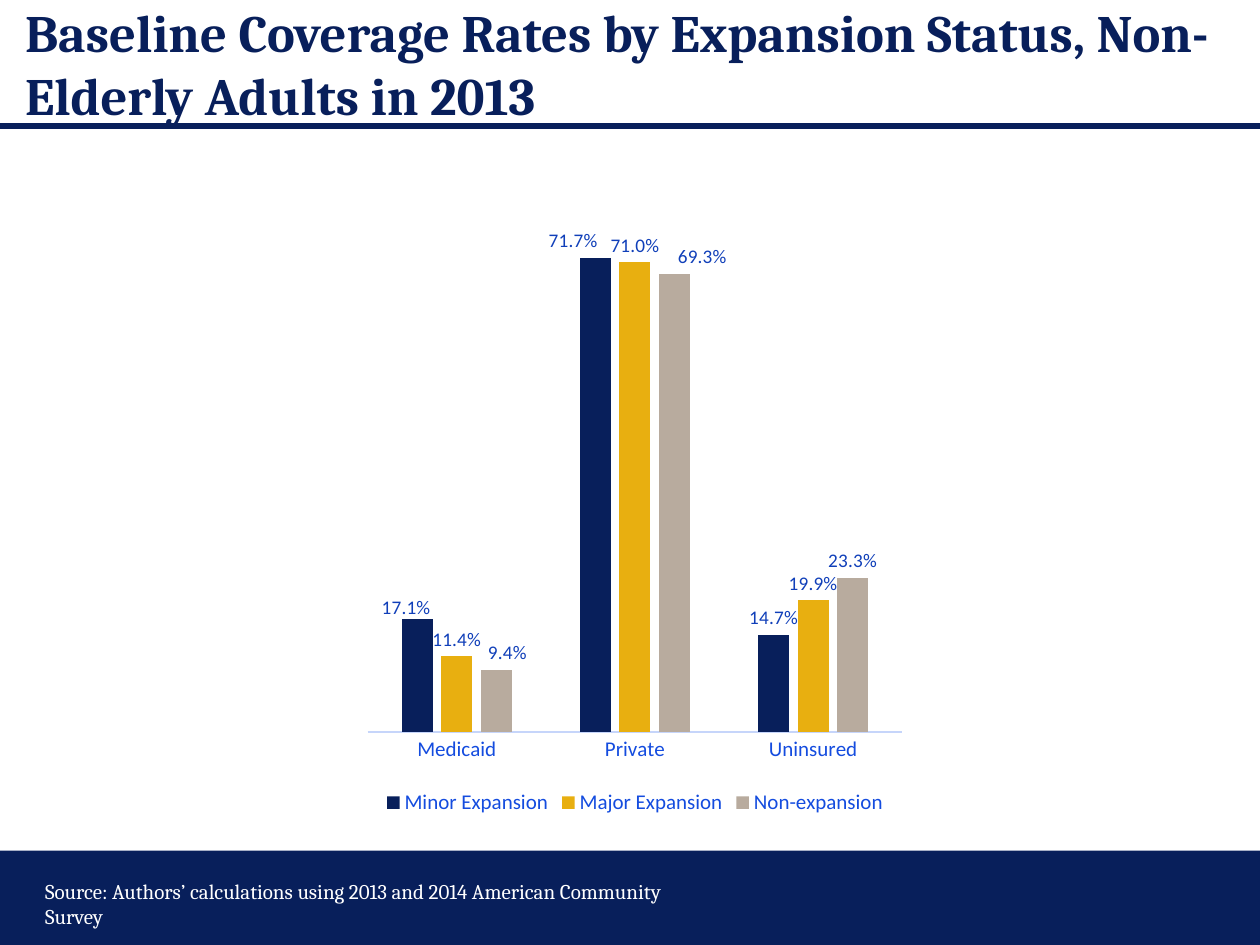
from lxml import etree
from pptx import Presentation
from pptx.chart.data import CategoryChartData
from pptx.dml.color import RGBColor
from pptx.enum.chart import (XL_CHART_TYPE, XL_LABEL_POSITION, XL_LEGEND_POSITION,
                             XL_TICK_MARK)
from pptx.enum.shapes import MSO_CONNECTOR, MSO_SHAPE
from pptx.enum.text import MSO_ANCHOR
from pptx.oxml.ns import qn
from pptx.util import Inches, Pt

COLUMN = XL_CHART_TYPE.COLUMN_CLUSTERED
OUTSIDE = XL_LABEL_POSITION.OUTSIDE_END
BOTTOM = XL_LEGEND_POSITION.BOTTOM
NONE = XL_TICK_MARK.NONE
STRAIGHT = MSO_CONNECTOR.STRAIGHT
RECT = MSO_SHAPE.RECTANGLE
TOP, MIDDLE = MSO_ANCHOR.TOP, MSO_ANCHOR.MIDDLE

COLORS = {"navy": "081F5B", "gold": "E8AF10", "taupe": "B8AB9E", "blue": "144CDF",
          "label": "103FB9", "axis": "C6D5FA", "white": "FFFFFF"}
FORMATS = {
    "title": {"name": "Cambria", "size": Pt(30), "bold": True, "color": "navy"},
    "source": {"name": "Cambria", "size": Pt(12), "color": "white"},
    "chart": {"name": "Calibri", "size": Pt(10), "color": "navy"},
    "axis": {"name": "Calibri", "size": Pt(12), "color": "blue"},
    "label": {"name": "Calibri", "size": Pt(11), "color": "label"},
}
PERCENT = "0.0%"
CATS = ["Medicaid", "Private", "Uninsured"]
# Name, colour, values, and label shifts by point as shares of the chart
SERIES = [
    ("Minor Expansion", "navy", (0.171, 0.717, 0.147), {0: (-0.02, 0.01), 1: (-0.04, 0)}),
    ("Major Expansion", "gold", (0.114, 0.71, 0.199), {}),
    ("Non-expansion", "taupe", (0.094, 0.693, 0.233), {0: (0.02, 0), 1: (0.05, 0)}),
]


def rgb(key):
    return RGBColor.from_string(COLORS[key])


def style(font, kind):
    for key, value in FORMATS[kind].items():
        if key == "color":
            font.color.rgb = rgb(value)
        else:
            setattr(font, key, value)


def add_text(slide, box, text, kind, anchor):
    frame = slide.shapes.add_textbox(*map(Inches, box)).text_frame
    frame.word_wrap = True
    frame.vertical_anchor = anchor
    run = frame.paragraphs[0].add_run()
    run.text = text
    style(run.font, kind)


def make_layout(**parts):
    layout = etree.Element(qn("c:layout"))
    manual = etree.SubElement(layout, qn("c:manualLayout"))
    for tag, value in parts.items():
        etree.SubElement(manual, qn("c:" + tag)).set("val", str(value))
    return layout


def add_header(slide, box):
    left, top, width, height = box
    # Rule along the lower edge
    rule = slide.shapes.add_connector(STRAIGHT, Inches(left), Inches(top + height),
                                      Inches(left + width), Inches(top + height))
    rule.line.color.rgb = rgb("navy")
    rule.line.width = Pt(3)
    etree.SubElement(rule._element.spPr, qn("a:effectLst"))
    add_text(slide, (left + 0.1, top, width - 0.25, height),
             "Baseline Coverage Rates by Expansion Status, Non-Elderly Adults in 2013",
             "title", MIDDLE)


def add_labels(series, shifts):
    labels = series.data_labels
    labels.show_value = True
    labels.number_format = PERCENT
    labels.number_format_is_linked = False
    labels.position = OUTSIDE
    style(labels.font, "label")
    # Points whose label is moved aside
    for index, (x, y) in shifts.items():
        label = series.points[index].data_label
        label.position = OUTSIDE
        style(label.font, "label")
        idx = series._element.xpath(f"c:dLbls/c:dLbl/c:idx[@val='{index}']")[0]
        code = etree.Element(qn("c:numFmt"), formatCode=PERCENT, sourceLinked="0")
        idx.addnext(code)
        idx.addnext(make_layout(x=x, y=y))


def add_rates(slide, box):
    data = CategoryChartData(number_format=PERCENT)
    data.categories = CATS
    for name, _, values, _ in SERIES:
        data.add_series(name, values)
    chart = slide.shapes.add_chart(COLUMN, *map(Inches, box), data).chart
    chart.has_title = False
    style(chart.font, "chart")

    # Plot and bars
    plot = chart.plots[0]
    plot.vary_by_categories = False
    plot.gap_width, plot.overlap = 219, -27
    for series, (_, color, _, shifts) in zip(plot.series, SERIES):
        series.format.fill.solid()
        series.format.fill.fore_color.rgb = rgb(color)
        add_labels(series, shifts)
    area = chart._chartSpace.chart.plotArea
    for old in area.findall(qn("c:layout")):
        area.remove(old)
    area.insert(0, make_layout(layoutTarget="inner", xMode="edge", yMode="edge",
                               x=0.02, y=0.02, w=0.96, h=0.84))

    # Axes
    rates = chart.value_axis
    rates.minimum_scale, rates.maximum_scale = 0, 0.8
    rates.has_major_gridlines = False
    rates.visible = False
    groups = chart.category_axis
    groups.major_tick_mark = groups.minor_tick_mark = NONE
    groups.format.line.color.rgb = rgb("axis")
    groups.format.line.width = Pt(0.75)
    style(groups.tick_labels.font, "axis")

    # Legend
    chart.has_legend = True
    chart.legend.position = BOTTOM
    chart.legend.include_in_layout = False
    style(chart.legend.font, "axis")


def add_footer(slide, box):
    left, top, _, _ = box
    band = slide.shapes.add_shape(RECT, *map(Inches, box))
    band.shadow.inherit = False
    band.fill.solid()
    band.fill.fore_color.rgb = rgb("navy")
    band.line.fill.background()
    add_text(slide, (left + 0.26, top + 0.17, 5.33, 0.5),
             "Source: Authors’ calculations using 2013 and 2014 American Community Survey",
             "source", TOP)


def main():
    deck = Presentation()
    deck.slide_width, deck.slide_height = Inches(10), Inches(7.5)
    slide = deck.slides.add_slide(deck.slide_layouts[6])
    add_footer(slide, (0, 6.75, 10, 0.75))
    add_header(slide, (0, 0, 10, 1))
    add_rates(slide, (2.83, 1.51, 4.42, 5))
    deck.save("out.pptx")


if __name__ == "__main__":
    main()
